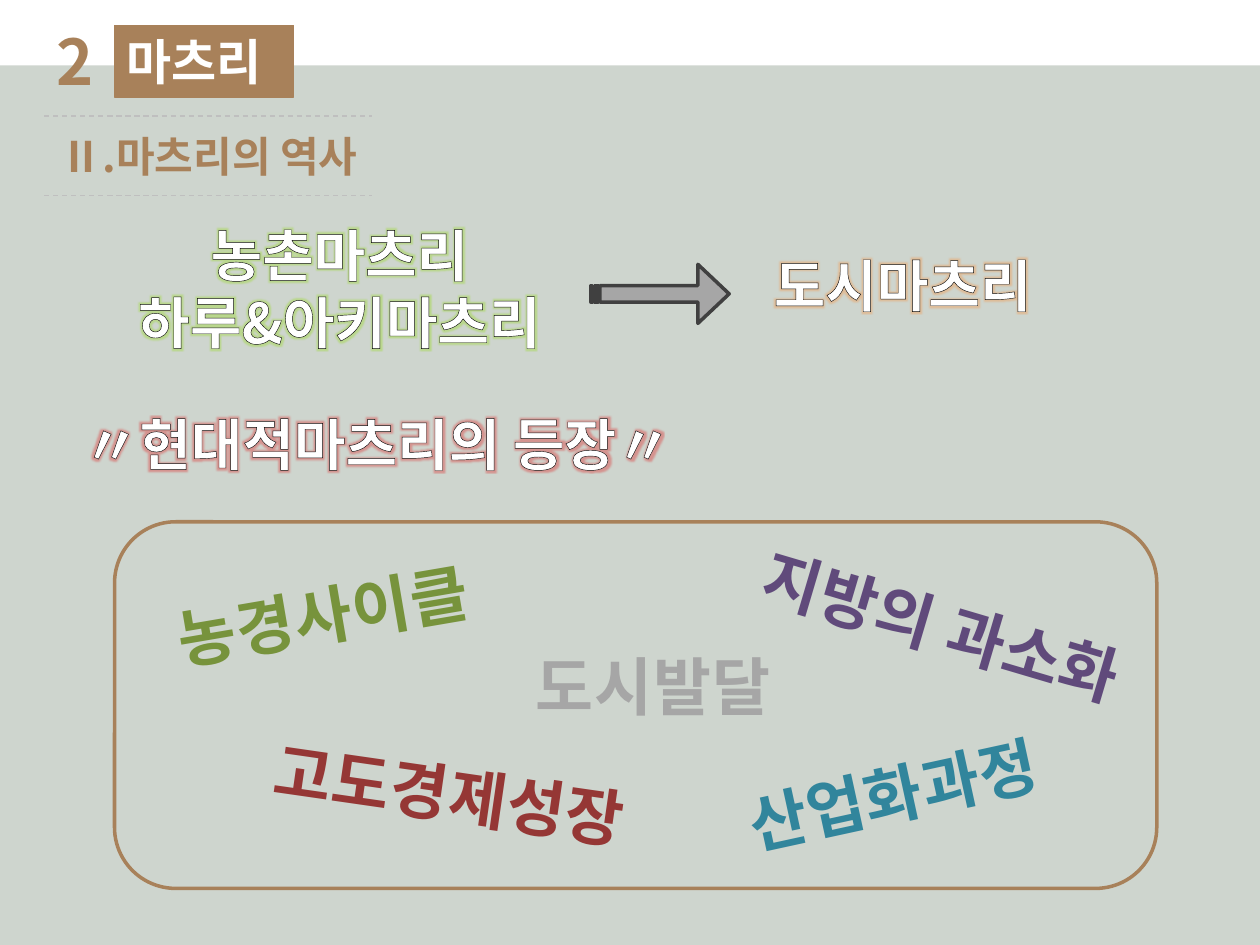
import pptx
import pptx.util
import pptx.oxml
import pptx.oxml.ns
import pptx.dml.color
import pptx.enum.dml
import pptx.enum.shapes
import pptx.enum.text
from pptx.util import Cm, Pt
from pptx.dml.color import RGBColor

FONT = "Noto Sans CJK KR"
WHITE = RGBColor(0xFF, 0xFF, 0xFF)
SAGE = RGBColor(0xCE, 0xD5, 0xCE)
BROWN = RGBColor(0xA8, 0x81, 0x5A)
LIGHT_GRAY = RGBColor(0xBF, 0xBF, 0xBF)
GRAY = RGBColor(0xA6, 0xA6, 0xA6)
DARK_GRAY = RGBColor(0x40, 0x40, 0x40)
OUTLINE = RGBColor(0x0D, 0x0D, 0x0D)
MID_GRAY = RGBColor(0x7F, 0x7F, 0x7F)
GREEN = RGBColor(0x77, 0x93, 0x3C)
RED = RGBColor(0x95, 0x37, 0x35)
TEAL = RGBColor(0x31, 0x85, 0x9C)
PURPLE = RGBColor(0x60, 0x4A, 0x7B)
GREEN_GLOW = RGBColor(0x9B, 0xDB, 0x2B)
ORANGE_GLOW = RGBColor(0xF7, 0x96, 0x46)
RED_GLOW = RGBColor(0xE0, 0x30, 0x30)

SHAPE = pptx.enum.shapes.MSO_SHAPE
ALIGN = pptx.enum.text.PP_ALIGN
GRADIENT_STOPS = [(0, WHITE), (9, WHITE), (50, MID_GRAY), (79, WHITE), (100, WHITE)]


def drawing_element(markup):
    namespace = pptx.oxml.ns.nsdecls("a")
    return pptx.oxml.parse_xml(markup.replace(">", f" {namespace}>", 1))


def style_text(text_frame, size, color, alignment):
    for paragraph in text_frame.paragraphs:
        paragraph.alignment = alignment
        for run in paragraph.runs:
            run.font.size = Pt(size)
            run.font.bold = True
            run.font.name = FONT
            run.font.color.rgb = color
            run.font._element.append(drawing_element(f'<a:ea typeface="{FONT}"></a:ea>'))


def add_text(slide, position, text, size, color, alignment=ALIGN.CENTER, wrap=False):
    left, top, width, height = position
    box = slide.shapes.add_textbox(Cm(left), Cm(top), Cm(width), Cm(height))
    box.text_frame.word_wrap = wrap
    box.text_frame.text = text
    style_text(box.text_frame, size, color, alignment)
    return box


def add_glowing_text(slide, position, text, glow):
    """Outlined gradient lettering with a soft glow."""
    box = add_text(slide, position, text, 32, WHITE)
    stops = "".join(
        f'<a:gs pos="{place * 1000}"><a:srgbClr val="{color}"/></a:gs>'
        for place, color in GRADIENT_STOPS)
    effects = [
        f'<a:ln w="10541"><a:solidFill><a:srgbClr val="{OUTLINE}"/></a:solidFill></a:ln>',
        f'<a:gradFill><a:gsLst>{stops}</a:gsLst><a:lin ang="5400000"/></a:gradFill>',
        f'<a:effectLst><a:glow rad="63500"><a:srgbClr val="{glow}">'
        '<a:alpha val="40000"/></a:srgbClr></a:glow></a:effectLst>',
    ]
    for paragraph in box.text_frame.paragraphs:
        for run in paragraph.runs:
            properties = run.font._element
            properties.remove(properties.find(pptx.oxml.ns.qn("a:solidFill")))
            for index, markup in enumerate(effects):
                properties.insert(index, drawing_element(markup))


def add_shape(slide, kind, position, fill=None, line=None, line_width=0.75):
    left, top, width, height = position
    shape = slide.shapes.add_shape(kind, Cm(left), Cm(top), Cm(width), Cm(height))
    shape.shadow.inherit = False
    if fill is None:
        shape.fill.background()
    else:
        shape.fill.solid()
        shape.fill.fore_color.rgb = fill
    if line is None:
        shape.line.fill.background()
    else:
        shape.line.color.rgb = line
        shape.line.width = Pt(line_width)
    return shape


def add_header(slide, left, top):
    # Subtitle between two dashed rules
    add_text(slide, (left - 0.18, top + 2.18, 7.01, 1.27), "Ⅱ.마츠리의 역사", 24, BROWN, wrap=True)
    for offset in (2.01, 3.61):
        rule = slide.shapes.add_connector(
            pptx.enum.shapes.MSO_CONNECTOR.STRAIGHT,
            Cm(left), Cm(top + offset), Cm(left + 6.6), Cm(top + offset))
        rule.line.color.rgb = LIGHT_GRAY
        rule.line.width = Pt(0.75)
        rule.line.dash_style = pptx.enum.dml.MSO_LINE.DASH
        rule._element.spPr.append(drawing_element("<a:effectLst></a:effectLst>"))

    # Chapter title and number
    badge = add_shape(slide, SHAPE.RECTANGLE, (left + 1.42, top + 0.18, 3.61, 1.45), BROWN, BROWN)
    badge.text_frame.text = "마츠리"
    badge.text_frame.vertical_anchor = pptx.enum.text.MSO_ANCHOR.MIDDLE
    style_text(badge.text_frame, 28, WHITE, ALIGN.JUSTIFY)
    add_text(slide, (left, top, 3.2, 1.8), "2", 36, BROWN, ALIGN.LEFT, wrap=True)


def add_history(slide, left, top):
    # From village festivals to city festivals
    add_glowing_text(slide, (left + 1.22, top, 9.47, 3), "농촌마츠리\n하루&아키마츠리", GREEN_GLOW)
    arrow = add_shape(slide, SHAPE.STRIPED_RIGHT_ARROW, (left + 11.02, top + 1.01, 2.79, 1.19),
                      GRAY, DARK_GRAY, 2)
    arrow.adjustments[0] = 0.28
    arrow.adjustments[1] = 0.53
    add_glowing_text(slide, (left + 14.2, top + 0.61, 6.22, 1.63), "도시마츠리", ORANGE_GLOW)
    # Outcome
    add_glowing_text(slide, (left, top + 3.81, 13.46, 1.63), "〃현대적마츠리의 등장〃", RED_GLOW)


def add_causes(slide, left, top, width, height):
    add_shape(slide, SHAPE.ROUNDED_RECTANGLE, (left, top, width, height), line=BROWN, line_width=2)
    # Tilted keywords: text, offset, width, rotation, color
    keywords = [
        ("농경사이클", 0.69, 0.99, 7.01, -9.7, GREEN),
        ("도시발달", 8, 2.41, 5.72, 0, GRAY),
        ("고도경제성장", 2.59, 4.59, 8.31, 8.3, RED),
        ("산업화과정", 12.19, 4.59, 7.01, -12.3, TEAL),
        ("지방의 과소화", 12.27, 1.21, 8.79, 16.5, PURPLE),
    ]
    for text, x, y, text_width, rotation, color in keywords:
        box = add_text(slide, (left + x, top + y, text_width, 1.8), text, 36, color)
        box.rotation = rotation
        box.text_frame.paragraphs[0].runs[0].font._element.set("spc", "50")


def main():
    presentation = pptx.Presentation()
    presentation.slide_width = Cm(25.4)
    presentation.slide_height = Cm(19.05)
    slide = presentation.slides.add_slide(presentation.slide_layouts[6])
    # Backdrop below the white top strip
    add_shape(slide, SHAPE.RECTANGLE, (0, 1.32, 25.4, 17.73), SAGE)
    add_header(slide, 0.89, 0.33)
    add_history(slide, 0.89, 4.32)
    add_causes(slide, 2.31, 10.52, 21.01, 7.39)
    presentation.save("out.pptx")


if __name__ == "__main__":
    main()
